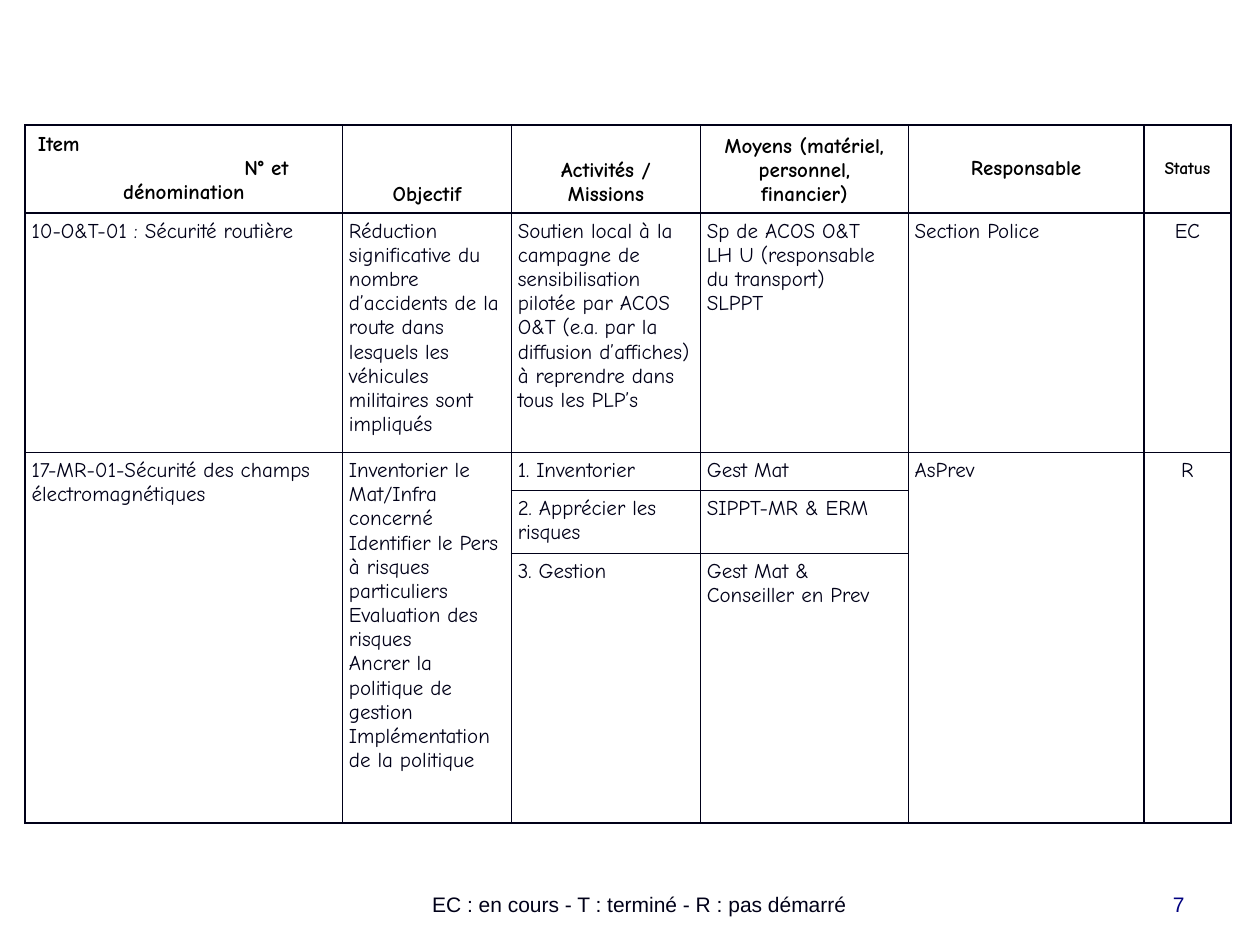
from lxml import etree
from pptx import Presentation
from pptx.dml.color import RGBColor
from pptx.enum.text import MSO_ANCHOR, PP_ALIGN
from pptx.oxml.ns import qn
from pptx.util import Inches, Pt

LEFT, CENTER, RIGHT = PP_ALIGN.LEFT, PP_ALIGN.CENTER, PP_ALIGN.RIGHT
TOP, MIDDLE, BOTTOM = MSO_ANCHOR.TOP, MSO_ANCHOR.MIDDLE, MSO_ANCHOR.BOTTOM

BLACK = RGBColor(0x00, 0x00, 0x00)
INK = RGBColor(0x00, 0x00, 0x18)
NAVY = RGBColor(0x00, 0x00, 0x80)

COLUMN_WIDTHS = [2.52, 1.34, 1.5, 1.65, 1.87, 0.69]
ROW_HEIGHTS = [0.67, 1.83, 0.3, 0.49, 2.14]
MERGED_COLUMNS = [0, 1, 4, 5]
STATUS_COLUMN = 5

HEADERS = [
    ("Item\nN° et\ndénomination", MIDDLE),
    ("Objectif", BOTTOM),
    ("Activités / Missions", BOTTOM),
    ("Moyens (matériel, personnel, financier)", BOTTOM),
    ("Responsable", MIDDLE),
    ("Status", MIDDLE),
]
ACTIONS = [
    [
        "10-O&T-01 : Sécurité routière",
        "Réduction significative du nombre d’accidents de la route dans "
        "lesquels les véhicules militaires sont impliqués",
        "Soutien local à la campagne de sensibilisation pilotée par ACOS O&T "
        "(e.a. par la diffusion d’affiches) à reprendre dans tous les PLP’s",
        "Sp de ACOS O&T\nLH U (responsable du transport)\nSLPPT",
        "Section Police",
        "EC",
    ],
    [
        "17-MR-01-Sécurité des champs électromagnétiques",
        "Inventorier le Mat/Infra concerné\n"
        "Identifier le Pers à risques particuliers\n"
        "Evaluation des risques\n"
        "Ancrer la politique de gestion\n"
        "Implémentation de la politique",
        "1. Inventorier",
        "Gest Mat",
        "AsPrev",
        "R",
    ],
    [None, None, "2. Apprécier les risques", "SIPPT-MR & ERM", None, None],
    [None, None, "3. Gestion", "Gest Mat & Conseiller en Prev", None, None],
]


class SlideBuilder:
    table_font = "Comic Neue"
    note_font = "Arial"
    size = 12
    border_width = Pt(1)

    def __init__(self, presentation):
        self.width = presentation.slide_width
        self.height = presentation.slide_height
        self.slide = presentation.slides.add_slide(presentation.slide_layouts[6])

    def box(self, left, top, width, height):
        """Turn shares of the slide's size into lengths."""
        return (int(left * self.width), int(top * self.height),
                int(width * self.width), int(height * self.height))

    def fill_text(self, frame, text, font, color, align, size=None, bold=False):
        frame.word_wrap = True
        frame.text = text
        for paragraph in frame.paragraphs:
            paragraph.alignment = align
            for run in paragraph.runs:
                run.font.name = font
                run.font.size = Pt(size or self.size)
                run.font.bold = bold
                run.font.color.rgb = color

    def note(self, text, share, color, align):
        frame = self.slide.shapes.add_textbox(*self.box(*share)).text_frame
        frame.vertical_anchor = BOTTOM
        self.fill_text(frame, text, self.note_font, color, align)

    def table(self, share, column_widths, row_heights):
        """Add an unstyled table with a thin border round every cell."""
        table = self.slide.shapes.add_table(
            len(row_heights), len(column_widths), *self.box(*share)).table
        table.first_row = table.horz_banding = False
        for column, width in zip(table.columns, column_widths):
            column.width = Inches(width)
        for row, height in zip(table.rows, row_heights):
            row.height = Inches(height)
        for cell in table.iter_cells():
            cell.fill.background()
            self.border(cell)
        return table

    def border(self, cell):
        properties = cell._tc.get_or_add_tcPr()
        for position, side in enumerate(("lnL", "lnR", "lnT", "lnB")):
            line = etree.Element(qn(f"a:{side}"), w=str(self.border_width))
            fill = etree.SubElement(line, qn("a:solidFill"))
            etree.SubElement(fill, qn("a:srgbClr"), val=str(INK))
            properties.insert(position, line)

    def header_cell(self, cell, text, anchor, size=None):
        cell.vertical_anchor = anchor
        self.fill_text(cell.text_frame, text, self.table_font, BLACK, CENTER, size, True)

    def body_cell(self, cell, text, align):
        cell.vertical_anchor = TOP
        cell.margin_left = cell.margin_right = Inches(0.05)
        cell.margin_top = cell.margin_bottom = Inches(0.05)
        self.fill_text(cell.text_frame, text, self.table_font, INK, align)


def main():
    presentation = Presentation()
    presentation.slide_width, presentation.slide_height = Inches(10), Inches(7.5)
    builder = SlideBuilder(presentation)

    builder.note("EC : en cours - T : terminé - R : pas démarré",
                 (0.232, 0.91, 0.551, 0.067), INK, CENTER)

    plan = builder.table((0.02, 0.132, 0.957, 0.724), COLUMN_WIDTHS, ROW_HEIGHTS)
    for column in MERGED_COLUMNS:
        plan.cell(2, column).merge(plan.cell(4, column))

    for column, (title, anchor) in enumerate(HEADERS):
        size = 10 if column == STATUS_COLUMN else None
        builder.header_cell(plan.cell(0, column), title, anchor, size)
    item, number, _ = plan.cell(0, 0).text_frame.paragraphs
    item.alignment = number.alignment = LEFT
    number._p.get_or_add_pPr().set("marL", str(Inches(1.64)))

    for row, action in enumerate(ACTIONS, start=1):
        for column, text in enumerate(action):
            if text:
                align = CENTER if column == STATUS_COLUMN else LEFT
                builder.body_cell(plan.cell(row, column), text, align)

    builder.note("7", (0.717, 0.91, 0.233, 0.067), NAVY, RIGHT)
    presentation.save("out.pptx")


if __name__ == "__main__":
    main()
